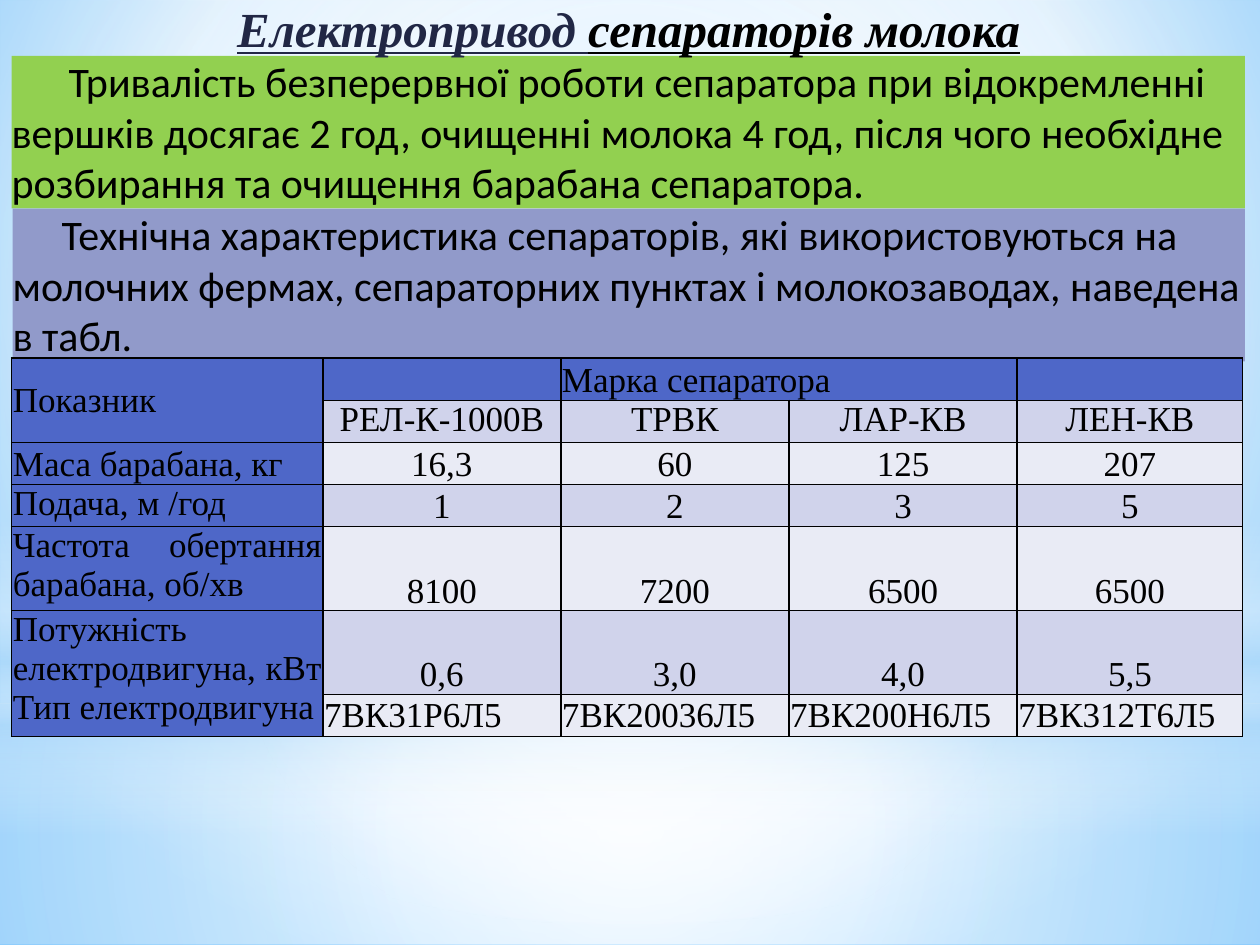
from lxml import etree
from pptx import Presentation
from pptx.dml.color import RGBColor
from pptx.enum import shapes, text
from pptx.oxml import ns
from pptx.util import Pt

color = RGBColor.from_string
A = "http://schemas.openxmlformats.org/drawingml/2006/main"
BLACK, HEAD_BLUE, BAND_DARK, BAND_LIGHT = "000000", "4E67C8", "D0D3EB", "E9EBF5"
SERIF = "Times New Roman"


def set_gradient(props, stops, direction):
    """Replace the solid fill in props; stops are (position %, colour, opacity %)."""
    marks = "".join(
        f'<a:gs pos="{pos * 1000}"><a:srgbClr val="{rgb}">'
        f'<a:alpha val="{opacity * 1000}"/></a:srgbClr></a:gs>'
        for pos, rgb, opacity in stops)
    gradient = etree.fromstring(
        f'<a:gradFill xmlns:a="{A}" rotWithShape="1"><a:gsLst>{marks}</a:gsLst>'
        f'{direction}</a:gradFill>')
    solid = props.find(ns.qn("a:solidFill"))
    props.replace(solid, gradient)


def set_font(font, name, size, rgb=BLACK):
    font.name, font.size = name, Pt(size)
    font.color.rgb = color(rgb)


deck = Presentation()
deck.slide_width, deck.slide_height = Pt(720), Pt(540)
slide = deck.slides.add_slide(deck.slide_layouts[6])

# Background
CIRCLE = '<a:path path="circle"><a:fillToRect l="{}000" t="{}000" r="{}000" b="{}000"/></a:path>'
centred = CIRCLE.format(50, 50, 50, 50)
slide.background.fill.solid()
slide.background.fill.fore_color.rgb = color("FFFFFF")
set_gradient(slide.element.find(".//" + ns.qn("p:bgPr")),
             [(0, "9ED5FF", 100), (60, "FFFFFF", 100), (100, "5BB9FF", 100)],
             CIRCLE.format(20, 10, 20, 60))

# Soft glows: kind, top, height, stops, direction
RECT, OVAL = shapes.MSO_SHAPE.RECTANGLE, shapes.MSO_SHAPE.OVAL
WHITE, SKY = "FFFFFF", "B4DCFA"
glows = [
    (RECT, 402, 138, [(0, WHITE, 91), (37, WHITE, 76), (100, SKY, 79)], centred),
    (RECT, 0, 402, [(0, WHITE, 89), (48, WHITE, 62), (100, SKY, 79)], centred),
    (RECT, 297, 180, [(0, WHITE, 0), (29, WHITE, 30), (45, SKY, 40), (55, WHITE, 26),
                      (65, SKY, 60), (100, WHITE, 0)], '<a:lin ang="5400000" scaled="0"/>'),
    (OVAL, 126, 402, [(0, WHITE, 100), (56, WHITE, 0)], centred),
]
for kind, top, height, stops, direction in glows:
    glow = slide.shapes.add_shape(kind, Pt(0), Pt(top), Pt(720), Pt(height))
    glow.shadow.inherit = False
    glow.line.fill.background()
    glow.fill.solid()
    set_gradient(glow.element.spPr, stops, direction)

# Introductory paragraphs: left, top, width, fill, first-line indent, wording
intros = [
    (6.7, 32, 704.7, "92D050", 32.5,
     "Тривалість безперервної роботи сепаратора при відокремленні вершків досягає 2 год, "
     "очищенні молока 4 год, після чого необхідне розбирання та очищення барабана сепаратора."),
    (7.2, 119.3, 704.2, "919ACA", 28,
     "Технічна характеристика сепараторів, які використовуються на молочних фермах, "
     "сепараторних пунктах і молокозаводах, наведена в табл."),
]
for left, top, width, fill, indent, wording in intros:
    intro = slide.shapes.add_shape(RECT, Pt(left), Pt(top), Pt(width), Pt(87.2))
    intro.shadow.inherit = False
    intro.line.fill.background()
    intro.fill.solid()
    intro.fill.fore_color.rgb = color(fill)
    frame = intro.text_frame
    frame.word_wrap = True
    frame.vertical_anchor = text.MSO_ANCHOR.TOP
    frame.margin_left = frame.margin_top = frame.margin_right = frame.margin_bottom = 0
    paragraph = frame.paragraphs[0]
    paragraph.text = wording
    paragraph.alignment = text.PP_ALIGN.LEFT
    paragraph._p.get_or_add_pPr().set("indent", str(Pt(indent)))
    set_font(paragraph.font, "Calibri", 24)

# Title
title = slide.shapes.add_textbox(Pt(8.6), Pt(4.3), Pt(701.3), Pt(28.8)).text_frame
title.word_wrap = True
title.margin_left = title.margin_top = title.margin_right = title.margin_bottom = 0
heading = title.paragraphs[0]
heading.alignment = text.PP_ALIGN.CENTER
heading.line_spacing = 0.85
for words, rgb in [("Електропривод ", "212745"), ("сепараторів молока", BLACK)]:
    run = heading.add_run()
    run.text = words
    set_font(run.font, SERIF, 28, rgb)
    run.font.bold = run.font.italic = run.font.underline = True

# Table of separator characteristics
rows = [
    ["Показник", "", "Марка сепаратора", "", ""],
    ["", "РЕЛ-К-1000В", "ТРВК", "ЛАР-КВ", "ЛЕН-КВ"],
    ["Маса барабана, кг", "16,3", "60", "125", "207"],
    ["Подача, м /год", "1", "2", "3", "5"],
    ["Частота обертання барабана, об/хв", "8100", "7200", "6500", "6500"],
    ["Потужність електродвигуна, кВт Тип електродвигуна", "0,6", "3,0", "4,0", "5,5"],
    ["", "7ВК31Р6Л5", "7ВК20036Л5", "7ВК200Н6Л5", "7ВК312Т6Л5"],
]
column_widths = [177.8, 136, 130.4, 130.4, 128.9]
row_heights = [24, 24, 24, 24, 48, 48, 24]
table = slide.shapes.add_table(len(rows), len(column_widths), Pt(6.7), Pt(204.7),
                               Pt(sum(column_widths)), Pt(sum(row_heights))).table
table.first_row = table.horz_banding = False
for column, width in zip(table.columns, column_widths):
    column.width = Pt(width)
for row, height in zip(table.rows, row_heights):
    row.height = Pt(height)

TOP, MIDDLE, BOTTOM = text.MSO_ANCHOR.TOP, text.MSO_ANCHOR.MIDDLE, text.MSO_ANCHOR.BOTTOM
label_anchors = [MIDDLE, TOP, BOTTOM, TOP, TOP, TOP, TOP]
value_anchors = [BOTTOM, TOP, BOTTOM, BOTTOM, BOTTOM, BOTTOM, MIDDLE]
last = len(rows) - 1
for r, row in enumerate(rows):
    for c, wording in enumerate(row):
        cell = table.cell(r, c)
        is_label = c == 0
        cell.margin_left = cell.margin_right = Pt(0.7)
        cell.margin_top = cell.margin_bottom = 0
        cell.vertical_anchor = label_anchors[r] if is_label else value_anchors[r]
        cell.fill.solid()
        band = BAND_DARK if r % 2 else BAND_LIGHT
        cell.fill.fore_color.rgb = color(HEAD_BLUE if is_label or r == 0 else band)
        paragraph = cell.text_frame.paragraphs[0]
        paragraph.text = wording
        justified = is_label or r in (0, last)
        paragraph.alignment = text.PP_ALIGN.JUSTIFY if justified else text.PP_ALIGN.CENTER
        set_font(paragraph.font, SERIF, 20)
        # Thin black borders come before the fill
        for place, side in enumerate(["lnL", "lnR", "lnT", "lnB"]):
            border = etree.fromstring(
                f'<a:{side} xmlns:a="{A}" w="{Pt(1)}"><a:solidFill>'
                f'<a:srgbClr val="{BLACK}"/></a:solidFill></a:{side}>')
            cell._tc.get_or_add_tcPr().insert(place, border)

# Merged cells: row labels over two rows, brand heading over two columns
for start, end in [((0, 0), (1, 0)), ((0, 2), (0, 3)), ((5, 0), (6, 0))]:
    table.cell(*start).merge(table.cell(*end))

deck.save("out.pptx")
